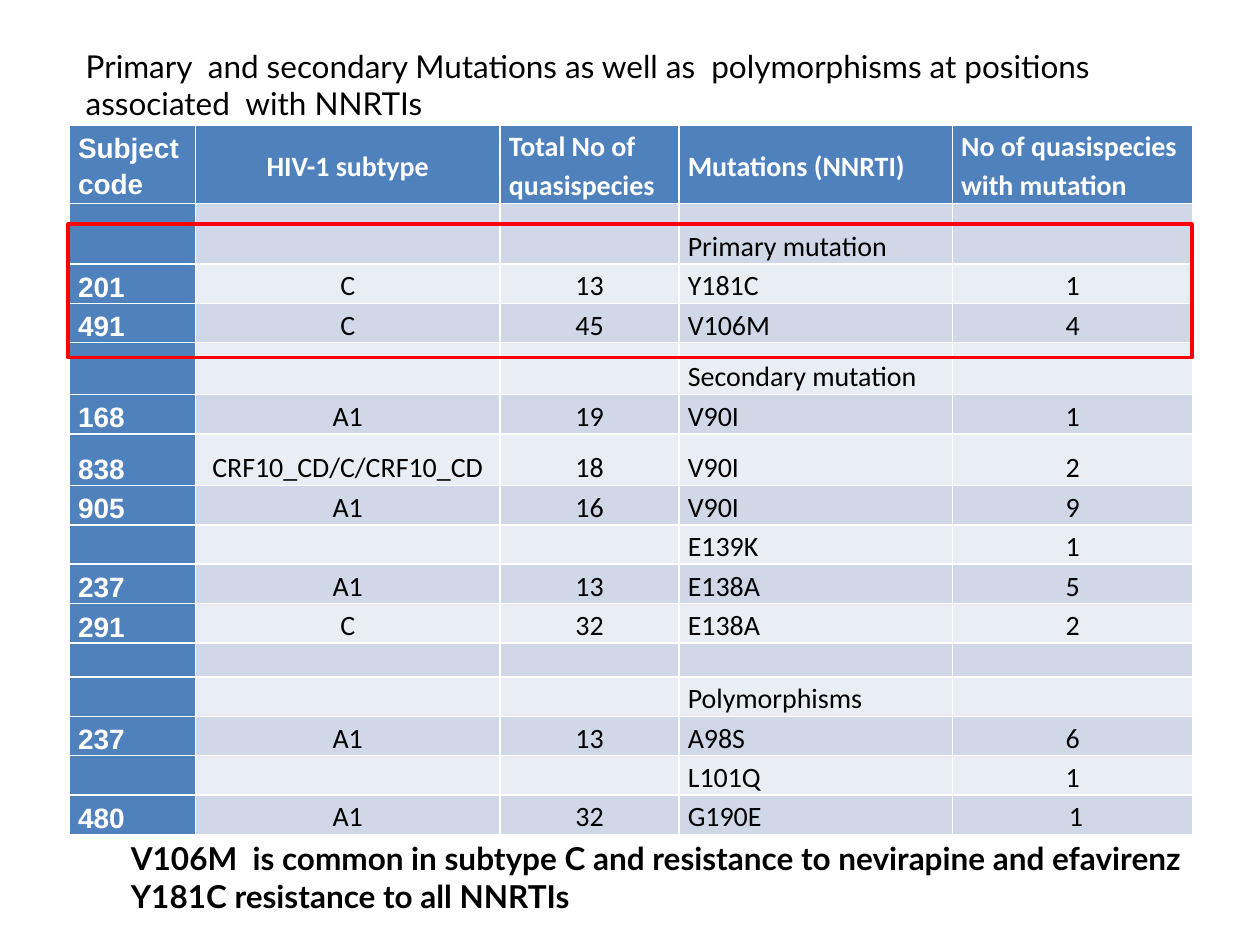
from lxml import etree
from pptx import Presentation
from pptx.dml.color import RGBColor
from pptx.enum.shapes import MSO_SHAPE
from pptx.enum.text import MSO_ANCHOR, MSO_AUTO_SIZE, PP_ALIGN
from pptx.oxml.ns import qn
from pptx.util import Inches, Pt

LEFT, CENTER = PP_ALIGN.LEFT, PP_ALIGN.CENTER
TOP, MIDDLE, BOTTOM = MSO_ANCHOR.TOP, MSO_ANCHOR.MIDDLE, MSO_ANCHOR.BOTTOM
RECT = MSO_SHAPE.RECTANGLE
NO_FIT = MSO_AUTO_SIZE.NONE

COLORS = {
    "head": "4F81BD",
    "odd": "D0D8E8",
    "even": "E9EDF4",
    "text": "000000",
    "white": "FFFFFF",
    "frame": "FF0000",
}

WIDTHS = [1, 2.42, 1.42, 2.17, 1.91]
ALIGNS = [LEFT, CENTER, CENTER, LEFT, CENTER]
ROW = 0.31
TALL = {0: 0.6, 1: 0.48, 4: 0.41, 6: 0.41, 11: 0.27}

HEADS = [
    "Subject code",
    "HIV-1 subtype",
    "Total No of quasispecies",
    "Mutations (NNRTI)",
    "No of quasispecies  with mutation",
]
ROWS = [
    ["", "", "", "Primary mutation", ""],
    ["201", "C", "13", "Y181C", "1"],
    ["491", "C", "45", "V106M", "4"],
    ["", "", "", "Secondary mutation", ""],
    ["168", "A1", "19", "V90I", "1"],
    ["838", "CRF10_CD/C/CRF10_CD", "18", "V90I", "2"],
    ["905", "A1", "16", "V90I", "9"],
    ["", "", "", "E139K", "1"],
    ["237", "A1", "13", "E138A", "5"],
    ["291", "C", "32", "E138A", "2"],
    ["", "", "", "", ""],
    ["", "", "", "Polymorphisms", ""],
    ["237", "A1", "13", "A98S", "6"],
    ["", "", "", "L101Q", "1"],
    ["480", "A1", "32", "G190E", "\N{NO-BREAK SPACE}1"],
]
NOTES = [
    "V106M  is common in subtype C and resistance to nevirapine and efavirenz",
    "Y181C resistance to all NNRTIs",
]


def rgb(name):
    return RGBColor.from_string(COLORS[name])


def write(frame, lines, font="Lato", size=18, color="text", bold=False,
          align=LEFT, space=None):
    for i, line in enumerate(lines):
        para = frame.paragraphs[0] if i == 0 else frame.add_paragraph()
        para.alignment = align
        para.line_spacing = space
        run = para.add_run()
        run.text = line
        run.font.name = font
        run.font.size = Pt(size)
        run.font.bold = bold
        run.font.color.rgb = rgb(color)


def shrink(cell):
    """Keep an empty cell from stretching its row."""
    para = cell.text_frame.paragraphs[0]._p
    etree.SubElement(para, qn("a:endParaRPr"), sz="1200")


def fill_cell(cell, text, row, col):
    head = row == 0
    strong = head or col == 0
    band = "odd" if row % 2 else "even"
    cell.fill.solid()
    cell.fill.fore_color.rgb = rgb("head" if strong else band)
    cell.margin_left = cell.margin_right = Inches(0.07)
    cell.margin_top = cell.margin_bottom = 0
    cell.vertical_anchor = MIDDLE if head else BOTTOM
    if not text:
        shrink(cell)
        return
    align = ALIGNS[col]
    if head and col != 1:
        align = LEFT
    write(cell.text_frame, [text], font="Calibri" if col else "Arial",
          size=16, color="white" if strong else "text", bold=strong,
          align=align, space=1.15)


def add_grid(slide, left, top):
    data = [HEADS] + ROWS
    tall = [TALL.get(i, ROW) for i in range(len(data))]
    grid = slide.shapes.add_table(
        len(data), len(WIDTHS), Inches(left), Inches(top),
        Inches(sum(WIDTHS)), Inches(sum(tall))).table
    grid.first_col = True
    for col, width in zip(grid.columns, WIDTHS):
        col.width = Inches(width)
    for r, line in enumerate(data):
        grid.rows[r].height = Inches(tall[r])
        for c, text in enumerate(line):
            fill_cell(grid.cell(r, c), text, r, c)


def set_title(slide, text, *box):
    title = slide.shapes.title
    title.left, title.top, title.width, title.height = map(Inches, box)
    frame = title.text_frame
    frame.auto_size = NO_FIT
    frame.vertical_anchor = TOP
    write(frame, [text])


def add_notes(slide, lines, *box):
    frame = slide.shapes.add_textbox(*map(Inches, box)).text_frame
    frame.word_wrap = False
    write(frame, lines, bold=True)


def add_frame(slide, *box):
    frame = slide.shapes.add_shape(RECT, *map(Inches, box))
    frame.shadow.inherit = False
    frame.fill.background()
    frame.line.color.rgb = rgb("frame")
    frame.line.width = Pt(2)


def main():
    deck = Presentation()
    deck.slide_width, deck.slide_height = Inches(10), Inches(7.5)
    slide = deck.slides.add_slide(deck.slide_layouts[5])
    add_grid(slide, 0.55, 0.99)
    set_title(slide, "Primary  and secondary Mutations as well as  "
              "polymorphisms at positions associated  with NNRTIs",
              0.58, 0.32, 8.83, 0.71)
    add_notes(slide, NOTES, 0.94, 6.61, 9.09, 0.71)
    add_frame(slide, 0.54, 1.78, 8.92, 1.06)
    deck.save("out.pptx")


if __name__ == "__main__":
    main()
